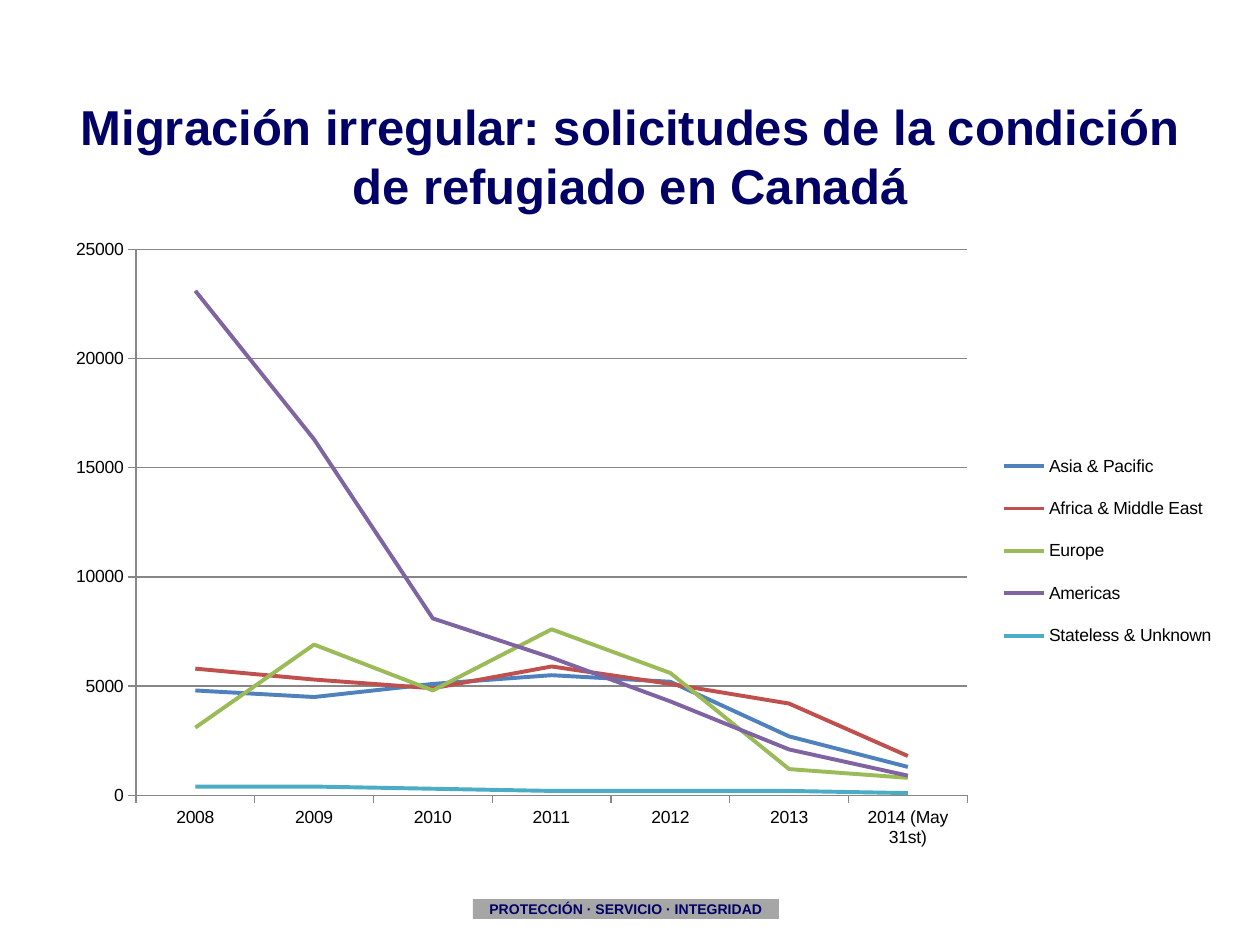
from dataclasses import dataclass

from pptx import Presentation
from pptx.chart.data import CategoryChartData
from pptx.dml.color import RGBColor
from pptx.enum.chart import XL_CHART_TYPE, XL_LEGEND_POSITION, XL_TICK_MARK
from pptx.enum.shapes import MSO_SHAPE
from pptx.enum.text import MSO_ANCHOR, PP_ALIGN
from pptx.oxml import parse_xml
from pptx.oxml.ns import nsdecls, qn
from pptx.util import Emu, Pt

PX_PER_INCH = 126


@dataclass(frozen=True)
class Theme:
    font: str = "Arial"
    navy: str = "000066"
    black: str = "000000"
    band: str = "A6A6A6"
    rule: str = "878787"
    title_size: int = 28
    chart_size: int = 10
    motto_size: int = 8


theme = Theme()


def box(*lengths):
    """Turn px lengths into EMU."""
    return [Emu(round(px * 914400 / PX_PER_INCH)) for px in lengths]


def write_text(shape, text, *, size, color=theme.navy, bold=True):
    frame = shape.text_frame
    frame.word_wrap = True
    frame.vertical_anchor = MSO_ANCHOR.MIDDLE
    paragraph = frame.paragraphs[0]
    paragraph.alignment = PP_ALIGN.CENTER
    run = paragraph.add_run()
    run.text = text
    run.font.name = theme.font
    run.font.size = Pt(size)
    run.font.bold = bold
    run.font.color.rgb = RGBColor.from_string(color)


prs = Presentation()
prs.slide_width, prs.slide_height = box(1260, 945)
slide = prs.slides.add_slide(prs.slide_layouts[6])

# Title
title = slide.shapes.add_textbox(*box(63, 115, 1134, 81))
write_text(title, "Migración irregular: solicitudes de la condición de refugiado en Canadá",
           size=theme.title_size)

# Refugee claims by region
regions = [
    ("Asia & Pacific", "4F81BD", [4800, 4500, 5100, 5500, 5200, 2700, 1300]),
    ("Africa & Middle East", "C0504D", [5800, 5300, 4900, 5900, 5100, 4200, 1800]),
    ("Europe", "9BBB59", [3100, 6900, 4800, 7600, 5600, 1200, 800]),
    ("Americas", "8064A2", [23100, 16300, 8100, 6300, 4300, 2100, 900]),
    ("Stateless & Unknown", "4BACC6", [400, 400, 300, 200, 200, 200, 100]),
]
claims = CategoryChartData()
claims.categories = [str(year) for year in range(2008, 2014)] + ["2014 (May 31st)"]
for region, _, counts in regions:
    claims.add_series(region, counts)

chart = slide.shapes.add_chart(XL_CHART_TYPE.LINE, *box(54, 224, 1171, 635), claims).chart
chart.has_title = False
chart.font.name = theme.font
chart.font.size = Pt(theme.chart_size)
chart.font.color.rgb = RGBColor.from_string(theme.black)
chart.plots[0].vary_by_categories = False

for series, (_, color, _) in zip(chart.plots[0].series, regions):
    series.smooth = False
    series.format.line.width = Pt(2.25)
    series.format.line.color.rgb = RGBColor.from_string(color)

counts_axis = chart.value_axis
counts_axis.minimum_scale = 0
counts_axis.maximum_scale = 25000
counts_axis.major_unit = 5000
counts_axis.has_major_gridlines = True
for axis in (chart.category_axis, counts_axis):
    axis.major_tick_mark = XL_TICK_MARK.OUTSIDE
    axis.minor_tick_mark = XL_TICK_MARK.NONE
for ruled in (chart.category_axis, counts_axis, counts_axis.major_gridlines):
    ruled.format.line.width = Pt(0.75)
    ruled.format.line.color.rgb = RGBColor.from_string(theme.rule)

chart.has_legend = True
legend = chart.legend
legend.position = XL_LEGEND_POSITION.RIGHT
legend.include_in_layout = False

# Plot and legend places, as shares of the chart's width and height
plot_area = chart.plots[0]._element.getparent()
overlay = legend._element.find(qn("c:overlay"))
places = [
    (plot_area, plot_area[0], "inner", (0.07, 0.04, 0.71, 0.86)),
    (legend._element, overlay, None, (0.8, 0.33, 0.2, 0.37)),
]
for part, successor, target, (x, y, w, h) in places:
    layout_target = f'<c:layoutTarget val="{target}"/>' if target else ""
    layout = parse_xml(
        f'<c:layout {nsdecls("c")}><c:manualLayout>{layout_target}'
        '<c:xMode val="edge"/><c:yMode val="edge"/>'
        f'<c:x val="{x}"/><c:y val="{y}"/><c:w val="{w}"/><c:h val="{h}"/>'
        '</c:manualLayout></c:layout>')
    successor.addprevious(layout)
    for default in part.findall(qn("c:layout")):
        if default is not layout:
            part.remove(default)

# Motto
motto = slide.shapes.add_shape(MSO_SHAPE.RECTANGLE, *box(473, 899, 306, 20))
motto.shadow.inherit = False
motto.fill.solid()
motto.fill.fore_color.rgb = RGBColor.from_string(theme.band)
motto.line.fill.background()
write_text(motto, "PROTECCIÓN · SERVICIO · INTEGRIDAD", size=theme.motto_size)

prs.save("out.pptx")
